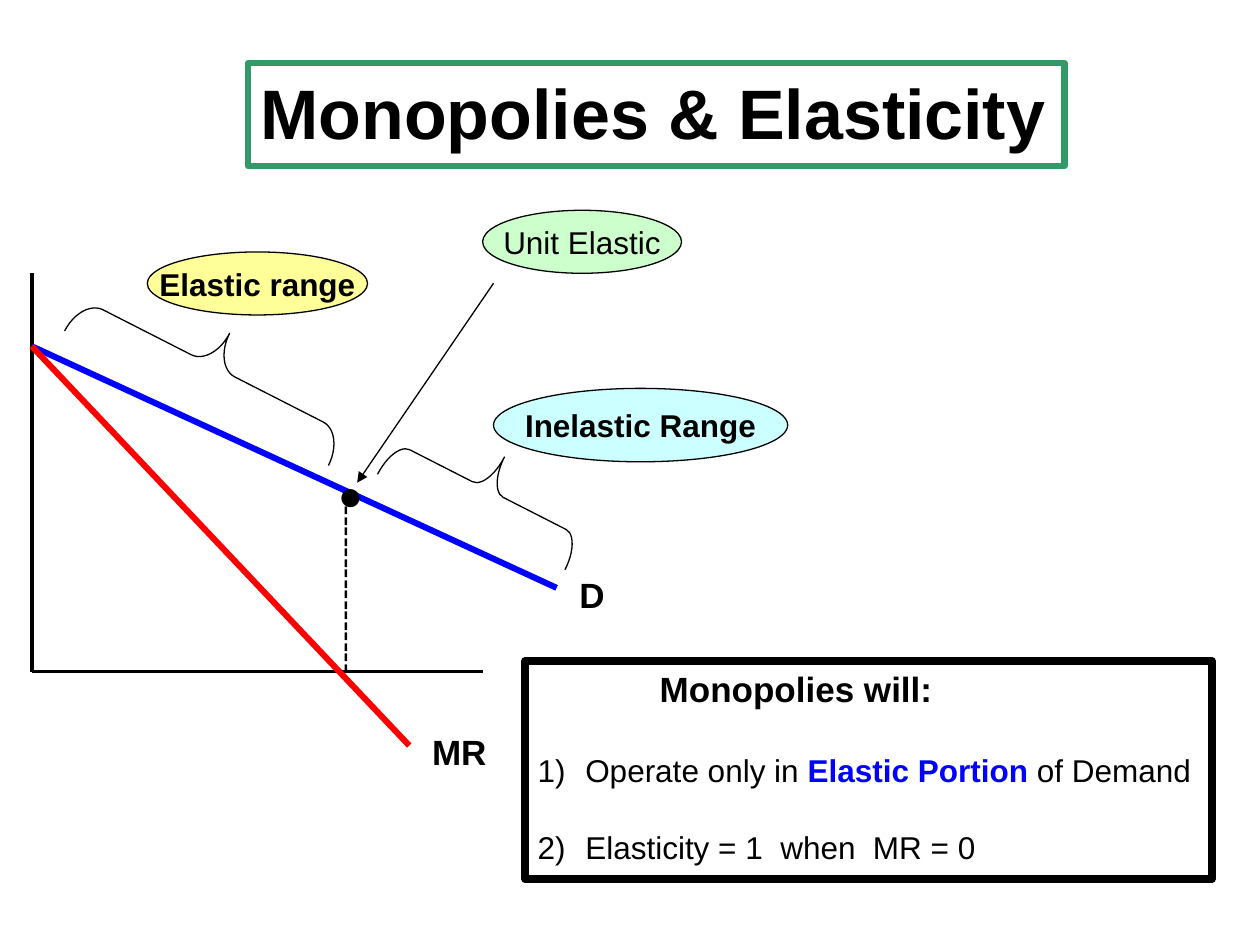
from dataclasses import dataclass

from lxml.etree import SubElement
from pptx import Presentation
from pptx.dml.color import RGBColor
from pptx.enum.shapes import MSO_CONNECTOR, MSO_SHAPE
from pptx.enum.text import MSO_ANCHOR, MSO_AUTO_SIZE, PP_ALIGN
from pptx.oxml.ns import qn
from pptx.util import Cm, Pt

COLORS = {
    "black": "000000", "blue": "0000FF", "red": "FF0000", "green": "339966",
    "mint": "CCFFCC", "yellow": "FFFF99", "aqua": "CCFFFF",
}


@dataclass
class Line:
    x1: float
    y1: float
    x2: float
    y2: float
    color: str = "black"
    width: float = 2
    arrow: bool = False


@dataclass
class Label:
    text: str
    x: float
    y: float
    w: float
    h: float
    size: float = 20
    bold: bool = True
    rotation: float = 0


@dataclass
class Bubble:
    text: str
    x: float
    y: float
    w: float
    h: float
    fill: str
    bold: bool = True


@dataclass
class Brace:
    x: float
    y: float
    w: float
    h: float
    curl: float


LINES = [
    Line(0.64, 5.51, 0.64, 13.54),                            # price axis
    Line(0.64, 13.54, 9.73, 13.54),                           # quantity axis
    Line(0.64, 6.98, 11.22, 11.85, "blue", 3.5),              # demand
    Line(0.64, 6.98, 8.25, 15.03, "red", 3.5),                # marginal revenue
    Line(9.95, 5.71, 7.2, 9.73, "black", 0.75, arrow=True),   # unit elastic pointer
]
LABELS = [
    Label("D", 11.43, 11.43, 1.02, 1.09),
    Label("MR", 8.46, 14.6, 1.6, 1.09),
    Label("-" * 17, 5, 11.28, 4.11, 1.02, 18, False, 90),
    Label("●", 6.56, 9.31, 1.02, 1.27, 24, False),
]
BUBBLES = [
    Bubble("Unit Elastic", 9.73, 4.24, 4.01, 1.27, "mint", False),
    Bubble("Elastic range", 2.97, 5.08, 4.44, 1.27, "yellow"),
    Bubble("Inelastic Range", 9.95, 7.83, 5.93, 1.48, "aqua"),
]
BRACES = [Brace(3.56, 4.39, 1.47, 5.97, 0.336), Brace(9.1, 7.75, 1.47, 4.24, 0.238)]


def rgb(name: str) -> RGBColor:
    return RGBColor.from_string(COLORS[name])


def outline(sp, color: str, width: float) -> None:
    sp.line.color.rgb = rgb(color)
    sp.line.width = Pt(width)


def add_run(p, text: str, size: float, bold: bool = False, color: str = "black") -> None:
    r = p.add_run()
    r.text = text
    for name, value in {"name": "Arial", "size": Pt(size), "bold": bold}.items():
        setattr(r.font, name, value)
    r.font.color.rgb = rgb(color)


def setup_frame(tf, anchor=MSO_ANCHOR.TOP, wrap: bool = False):
    fmt = {"auto_size": MSO_AUTO_SIZE.NONE, "word_wrap": wrap, "vertical_anchor": anchor}
    for name, value in fmt.items():
        setattr(tf, name, value)
    return tf.paragraphs[0]


def draw_line(s, d: Line) -> None:
    c = s.shapes.add_connector(MSO_CONNECTOR.STRAIGHT, Cm(d.x1), Cm(d.y1), Cm(d.x2), Cm(d.y2))
    outline(c, d.color, d.width)
    if d.arrow:
        SubElement(c.line._get_or_add_ln(), qn("a:tailEnd"), type="triangle")
    SubElement(c._element.spPr, qn("a:effectLst"))


def draw_label(s, d: Label) -> None:
    sp = s.shapes.add_textbox(Cm(d.x), Cm(d.y), Cm(d.w), Cm(d.h))
    sp.rotation = d.rotation
    p = setup_frame(sp.text_frame)
    p.alignment = PP_ALIGN.LEFT
    add_run(p, d.text, d.size, d.bold)


def draw_shape(s, kind, d):
    sp = s.shapes.add_shape(kind, Cm(d.x), Cm(d.y), Cm(d.w), Cm(d.h))
    sp.shadow.inherit = False
    outline(sp, "black", 0.75)
    return sp


def draw_bubble(s, d: Bubble) -> None:
    sp = draw_shape(s, MSO_SHAPE.OVAL, d)
    sp.fill.solid()
    sp.fill.fore_color.rgb = rgb(d.fill)
    p = setup_frame(sp.text_frame, MSO_ANCHOR.MIDDLE)
    p.alignment = PP_ALIGN.CENTER
    add_run(p, d.text, 18, d.bold)


def draw_brace(s, d: Brace) -> None:
    sp = draw_shape(s, MSO_SHAPE.RIGHT_BRACE, d)
    sp.fill.background()
    sp.adjustments[0] = d.curl
    sp.rotation = 297


def draw_title(s) -> None:
    sp = s.shapes.title
    sp.left, sp.top, sp.width, sp.height = Cm(5), Cm(1.27), Cm(16.46), Cm(2.08)
    outline(sp, "green", 3.5)
    p = setup_frame(sp.text_frame)
    p.alignment = PP_ALIGN.LEFT
    add_run(p, "Monopolies & Elasticity", 40, True)


def add_point(tf, gap: float, runs: list) -> None:
    p = tf.add_paragraph()
    p.alignment = PP_ALIGN.LEFT
    p.space_before = Pt(gap)
    pPr = p._p.get_or_add_pPr()
    pPr.set("marL", str(Cm(0.96)))
    pPr.set("indent", str(-Cm(0.96)))
    SubElement(pPr, qn("a:buFont"), typeface="Arial")
    SubElement(pPr, qn("a:buAutoNum"), type="arabicParenR")
    for text, bold, color in runs:
        add_run(p, text, 18, bold, color)


def draw_rules(s) -> None:
    sp = s.shapes.add_shape(MSO_SHAPE.RECTANGLE, Cm(10.59), Cm(13.33), Cm(13.84), Cm(4.39))
    sp.shadow.inherit = False
    sp.fill.background()
    outline(sp, "black", 4.75)
    tf = sp.text_frame
    p = setup_frame(tf)
    p.alignment = PP_ALIGN.LEFT
    p._p.get_or_add_pPr().set("marL", str(Cm(2.46)))
    add_run(p, "Monopolies will:", 20, True)
    add_point(tf, 24, [("Operate only in ", False, "black"),
                       ("Elastic Portion", True, "blue"),
                       (" of Demand", False, "black")])
    add_point(tf, 22, [("Elasticity = 1  when  MR = 0", False, "black")])


def main() -> None:
    prs = Presentation()
    prs.slide_width, prs.slide_height = Cm(25.4), Cm(19.05)
    s = prs.slides.add_slide(prs.slide_layouts[5])
    draw_title(s)
    # Graph, then its callouts
    for items, draw in ((LINES, draw_line), (LABELS, draw_label),
                        (BUBBLES, draw_bubble), (BRACES, draw_brace)):
        for d in items:
            draw(s, d)
    # Conclusions
    draw_rules(s)
    prs.save("out.pptx")


if __name__ == "__main__":
    main()
